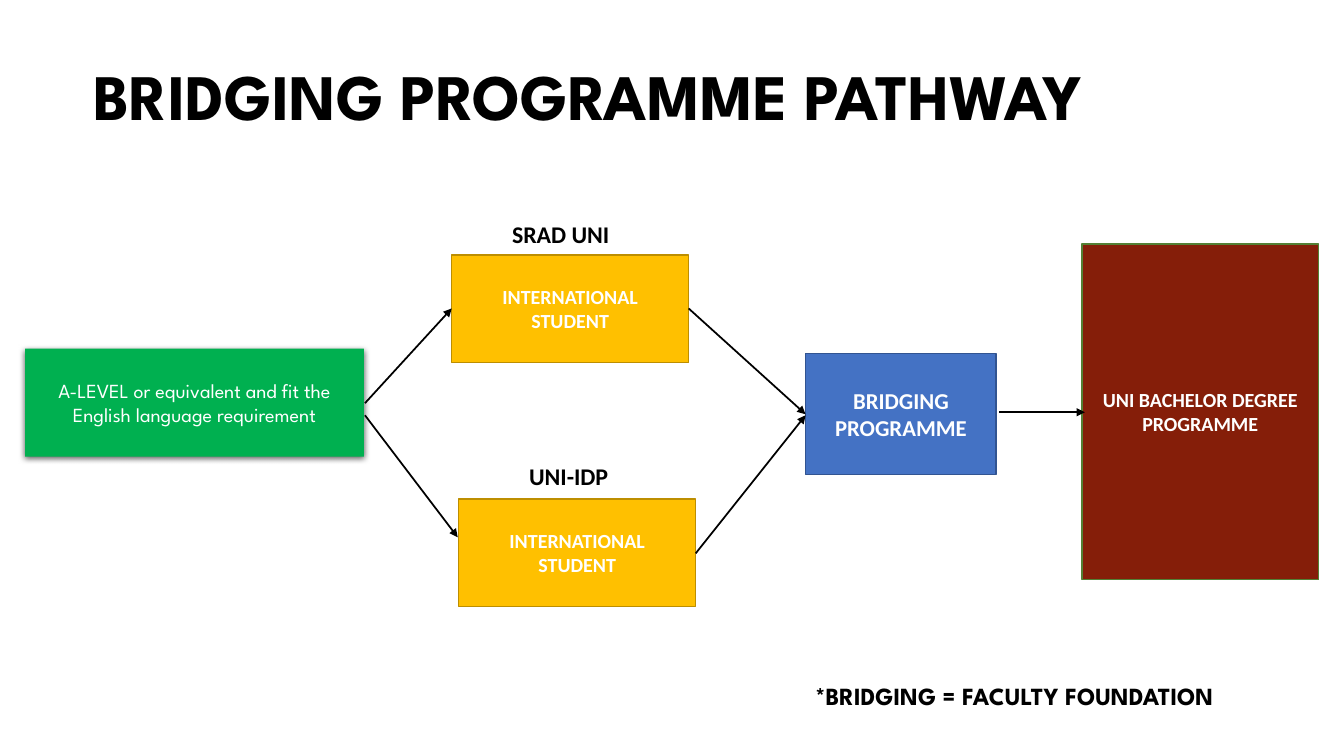
from dataclasses import dataclass
from typing import Optional

from lxml.etree import SubElement
from pptx import Presentation
from pptx.dml.color import RGBColor
from pptx.enum.shapes import MSO_CONNECTOR, MSO_SHAPE
from pptx.enum.text import MSO_ANCHOR, MSO_AUTO_SIZE, PP_ALIGN
from pptx.oxml.ns import qn
from pptx.util import Inches, Pt

HEADING_FONT = "League Spartan"
BODY_FONT = "Calibri"
BLACK = "000000"
WHITE = "FFFFFF"


@dataclass
class Box:
    text: str
    left: float
    top: float
    width: float
    height: float
    fill: str
    line: Optional[str] = None
    size: float = 14.3
    font: str = BODY_FONT
    bold: bool = True


@dataclass
class Label:
    text: str
    left: float
    top: float
    width: float
    height: float
    size: float = 17.1
    font: str = BODY_FONT
    anchor: MSO_ANCHOR = MSO_ANCHOR.TOP
    spacing: float = 1.0


@dataclass
class Arrow:
    x1: float
    y1: float
    x2: float
    y2: float


STUDENT = dict(text="INTERNATIONAL STUDENT", width=2.35, height=1.07,
               fill="FFC000", line="BD8E00")
ENTRY = Box("A-LEVEL or equivalent and fit the English language requirement",
            0.25, 3.46, 3.36, 1.07, "00B050", font=HEADING_FONT, bold=False)
BOXES = [
    Box(left=4.48, top=2.53, **STUDENT),
    Box(left=4.55, top=4.95, **STUDENT),
    Box("BRIDGING PROGRAMME", 7.99, 3.51, 1.89, 1.2, "4472C4", "325491", 16.2),
    Box("UNI BACHELOR DEGREE PROGRAMME", 10.73, 2.42, 2.35, 3.33,
        "851E09", "538035"),
]
ARROWS = [
    Arrow(3.62, 4, 4.48, 3.06),
    Arrow(3.62, 4.12, 4.54, 5.33),
    Arrow(6.83, 3.06, 7.99, 4.11),
    Arrow(6.9, 5.49, 7.99, 4.12),
    Arrow(9.91, 4.09, 10.76, 4.09),
]
LABELS = [
    Label("SRAD UNI", 4.98, 2.13, 1.85, 0.4),
    Label("UNI-IDP", 5.15, 4.53, 1.85, 0.4),
    Label("*BRIDGING = FACULTY FOUNDATION", 7.99, 6.37, 4.67, 1.09, 17.6,
          HEADING_FONT, MSO_ANCHOR.MIDDLE, 0.9),
]


def rgb(value: str) -> RGBColor:
    return RGBColor.from_string(value)


def write(sp, text: str, size: float, font: str, color: str, bold: bool = True,
          align=PP_ALIGN.LEFT, anchor=MSO_ANCHOR.MIDDLE, spacing: float = 1.0) -> None:
    tf = sp.text_frame
    tf.text = text
    tf.word_wrap = True
    tf.auto_size = MSO_AUTO_SIZE.NONE
    tf.vertical_anchor = anchor
    p = tf.paragraphs[0]
    p.alignment = align
    p.line_spacing = spacing
    r = p.runs[0]
    r.font.size = Pt(size)
    r.font.name = font
    r.font.bold = bold
    r.font.color.rgb = rgb(color)


def add_box(s, box: Box):
    sp = s.shapes.add_shape(MSO_SHAPE.RECTANGLE, Inches(box.left), Inches(box.top),
                            Inches(box.width), Inches(box.height))
    sp.fill.solid()
    sp.fill.fore_color.rgb = rgb(box.fill)
    if box.line:
        sp.line.color.rgb = rgb(box.line)
        sp.line.width = Pt(1)
    else:
        sp.line.fill.background()
    sp.shadow.inherit = False
    write(sp, box.text, box.size, box.font, WHITE, box.bold, PP_ALIGN.CENTER)
    return sp


def add_soft_shadow(sp) -> None:
    effects = sp._element.spPr.find(qn("a:effectLst"))
    shadow = SubElement(effects, qn("a:outerShdw"), blurRad=str(Pt(4.5)),
                        dist=str(Pt(1.5)), dir="5400000", rotWithShape="0")
    color = SubElement(shadow, qn("a:srgbClr"), val=BLACK)
    SubElement(color, qn("a:alpha"), val="63000")


def add_arrow(s, arrow: Arrow) -> None:
    sp = s.shapes.add_connector(MSO_CONNECTOR.STRAIGHT, Inches(arrow.x1), Inches(arrow.y1),
                                Inches(arrow.x2), Inches(arrow.y2))
    sp.line.color.rgb = rgb(BLACK)
    sp.line.width = Pt(1.25)
    SubElement(sp.line._get_or_add_ln(), qn("a:tailEnd"), type="triangle")
    SubElement(sp._element.spPr, qn("a:effectLst"))


def add_label(s, label: Label) -> None:
    sp = s.shapes.add_textbox(Inches(label.left), Inches(label.top),
                              Inches(label.width), Inches(label.height))
    write(sp, label.text, label.size, label.font, BLACK,
          anchor=label.anchor, spacing=label.spacing)


def add_title(s, text: str) -> None:
    sp = s.shapes.title
    sp.left, sp.top = Inches(0.83), Inches(0.44)
    sp.width, sp.height = Inches(11.99), Inches(1.09)
    write(sp, text, 46.3, HEADING_FONT, BLACK, spacing=0.9)


def main() -> None:
    prs = Presentation()
    prs.slide_width, prs.slide_height = Inches(13.33), Inches(7.5)
    s = prs.slides.add_slide(prs.slide_layouts[5])
    add_title(s, "BRIDGING PROGRAMME PATHWAY")
    add_soft_shadow(add_box(s, ENTRY))
    for box in BOXES:
        add_box(s, box)
    for arrow in ARROWS:
        add_arrow(s, arrow)
    for label in LABELS:
        add_label(s, label)
    prs.save("out.pptx")


if __name__ == "__main__":
    main()
